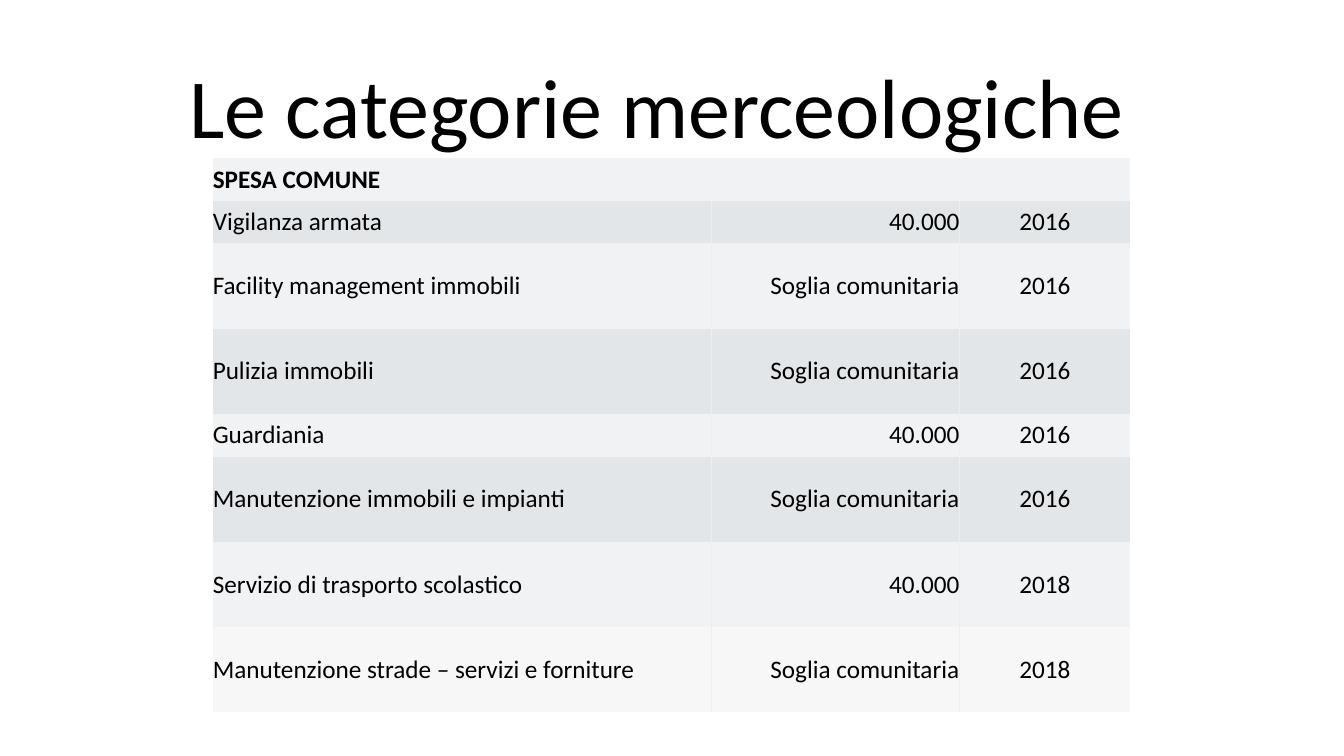
from lxml.etree import SubElement
from pptx import Presentation
from pptx.dml.color import RGBColor
from pptx.enum.text import MSO_ANCHOR, PP_ALIGN
from pptx.oxml.ns import qn
from pptx.util import Pt

# Content
TITLE = "Le categorie merceologiche "
HEADING = "SPESA COMUNE"
EU, LOCAL = "Soglia comunitaria", "40.000"
# category, threshold, year, height in row units
CATEGORIES = [
    ("Vigilanza armata", LOCAL, "2016", 1),
    ("Facility management immobili", EU, "2016", 2),
    ("Pulizia immobili", EU, "2016", 2),
    ("Guardiania", LOCAL, "2016", 1),
    ("Manutenzione immobili e impianti", EU, "2016", 2),
    ("Servizio di trasporto scolastico", LOCAL, "2018", 2),
    ("Manutenzione strade – servizi e forniture", EU, "2018", 2),
]

# Format
FONT, BLACK, GRID = "Calibri", "000000", "EEEEEE"
BANDS, LAST_BAND = ("F1F2F4", "E3E6E8"), "F7F7F7"
COLUMN_WIDTHS = (356.1, 177.2, 122.2)
COLUMN_ALIGNS = (PP_ALIGN.LEFT, PP_ALIGN.RIGHT, PP_ALIGN.CENTER)
ROW_UNIT = 30.45
NO_STYLE = "{2D5ABB26-0587-4C30-8999-92F81FD0307C}"


def color(hex_value):
    return RGBColor.from_string(hex_value)


def write(frame, text, size=18, bold=False, align=PP_ALIGN.LEFT, spacing=None):
    paragraph = frame.paragraphs[0]
    paragraph.alignment = align
    paragraph.line_spacing = spacing
    run = paragraph.add_run()
    run.text = text
    run.font.name, run.font.size, run.font.bold = FONT, Pt(size), bold
    run.font.color.rgb = color(BLACK)


def format_cell(cell, band):
    cell.margin_left = cell.margin_right = cell.margin_top = cell.margin_bottom = 0
    cell.vertical_anchor = MSO_ANCHOR.MIDDLE
    cell.fill.solid()
    cell.fill.fore_color.rgb = color(band)


def add_borders(cell, sides):
    properties = cell._tc.get_or_add_tcPr()
    for position, side in enumerate(sides):
        line = SubElement(properties, qn(f"a:ln{side}"), w=str(Pt(0.75)))
        fill = SubElement(line, qn("a:solidFill"))
        SubElement(fill, qn("a:srgbClr"), val=GRID)
        properties.insert(position, line)


presentation = Presentation()
presentation.slide_width, presentation.slide_height = Pt(960), Pt(540)
slide = presentation.slides.add_slide(presentation.slide_layouts[6])

# Table frame
units = [1] + [category[-1] for category in CATEGORIES]
table = slide.shapes.add_table(
    len(units), len(COLUMN_WIDTHS), Pt(152), Pt(113),
    Pt(sum(COLUMN_WIDTHS)), Pt(sum(units) * ROW_UNIT)).table
table.first_row = table.horz_banding = False
table._tbl.tblPr.find(qn("a:tableStyleId")).text = NO_STYLE
for column, width in zip(table.columns, COLUMN_WIDTHS):
    column.width = Pt(width)
for row, unit in zip(table.rows, units):
    row.height = Pt(unit * ROW_UNIT)

# Heading row
heading = table.cell(0, 0)
heading.merge(table.cell(0, len(COLUMN_WIDTHS) - 1))
format_cell(heading, BANDS[0])
write(heading.text_frame, HEADING, bold=True)

# Category rows
for row, (*values, _) in enumerate(CATEGORIES, 1):
    band = LAST_BAND if row == len(CATEGORIES) else BANDS[row % 2]
    for column, (value, align) in enumerate(zip(values, COLUMN_ALIGNS)):
        cell = table.cell(row, column)
        format_cell(cell, band)
        add_borders(cell, ("R", "LR", "L")[column])
        write(cell.text_frame, value, align=align)

# Title
title = slide.shapes.add_textbox(Pt(44), Pt(24), Pt(864), Pt(91.5)).text_frame
title.word_wrap = True
title.vertical_anchor = MSO_ANCHOR.BOTTOM
write(title, TITLE, size=60, align=PP_ALIGN.CENTER, spacing=0.9)

presentation.save("out.pptx")
